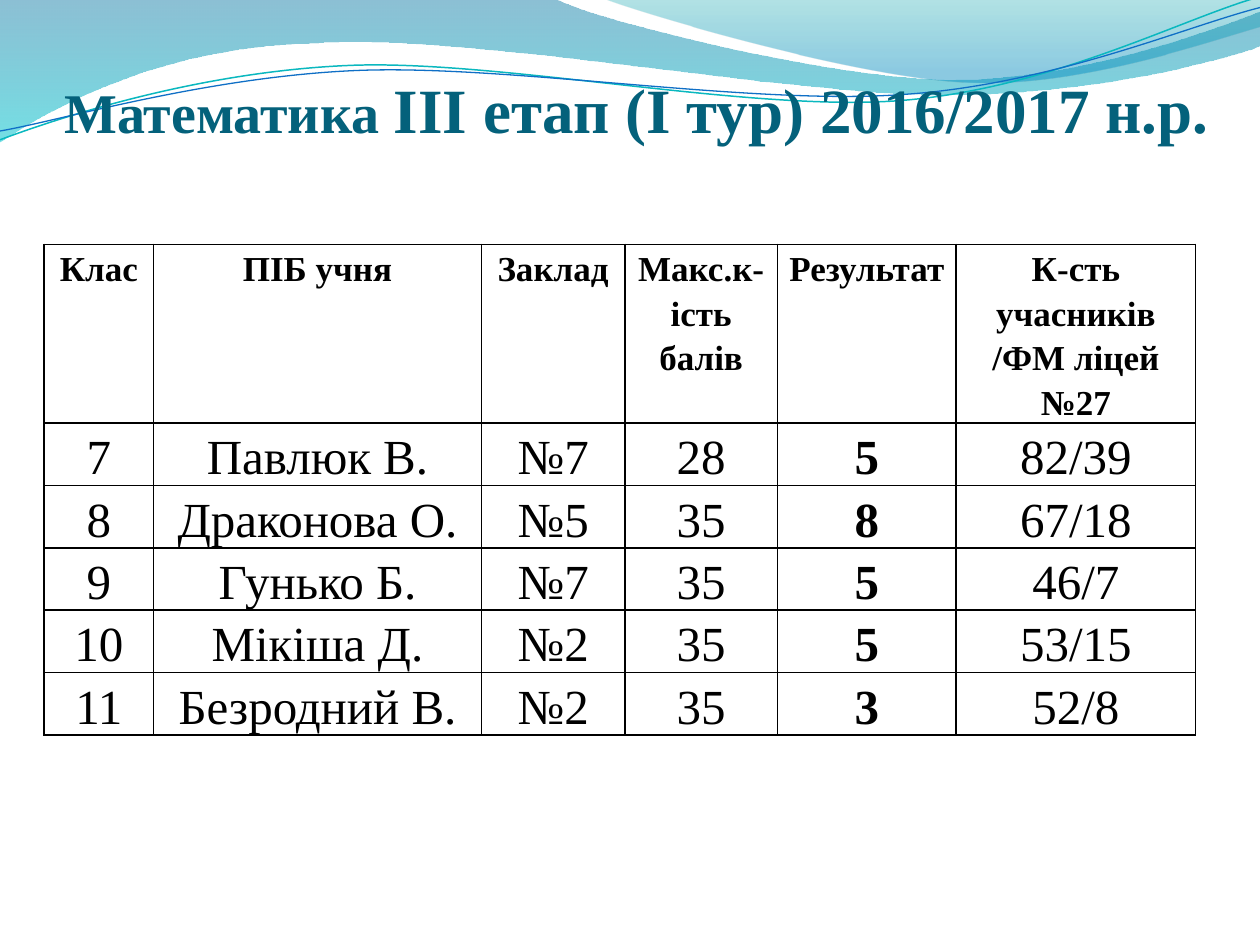
from lxml.etree import SubElement as Sub
from pptx import Presentation
from pptx.dml.color import RGBColor as Rgb
from pptx.enum.text import MSO_ANCHOR as Anchor, MSO_AUTO_SIZE as Auto, PP_ALIGN as Align
from pptx.oxml.ns import qn
from pptx.util import Inches, Pt

FONT = "Times New Roman"
COLS = [0.87, 2.6, 1.14, 1.21, 1.42, 1.9]
HEAD = ["Клас", "ПІБ учня", "Заклад", "Макс.к-ість балів", "Результат",
        "К-сть учасників\n/ФМ ліцей №27"]
ROWS = [
    ["7", "Павлюк В.", "№7", "28", "5", "82/39"],
    ["8", "Драконова О.", "№5", "35", "8", "67/18"],
    ["9", "Гунько Б.", "№7", "35", "5", "46/7"],
    ["10", "Мікіша Д.", "№2", "35", "5", "53/15"],
    ["11", "Безродний В.", "№2", "35", "3", "52/8"],
]
BAND = [
    [(0, 0)],
    [(4.4, -0.01)],
    [(4.76, 0.17), (6.64, 0.63), (7.58, 0.63)],
    [(8.53, 0.63), (9.58, 0.26), (10, 0.09)],
    [(10.01, 0.36)],
    [(9.83, 0.44), (8.7, 0.76), (7.46, 0.75)],
    [(6.22, 0.75), (3.82, 0.28), (2.57, 0.34)],
    [(1.29, 0.36), (0.46, 0.83), (-0.01, 1.13)],
    [(0, 0)],
]
CREST = [
    [(4.79, -0.01)],
    [(5.09, 0.11), (6.82, 0.62), (7.69, 0.65)],
    [(8.56, 0.69), (9.61, 0.32), (10, 0.21)],
    [(10, 0)],
    [(4.79, -0.01)],
]
TEAL = [
    [(0, 1.11)],
    [(0.48, 0.93), (1.58, 0.57), (2.77, 0.52)],
    [(3.95, 0.47), (5.93, 0.89), (7.13, 0.8)],
    [(8.33, 0.71), (9.38, 0.15), (9.98, -0.02)],
]
BLUE = [
    [(0, 1.04)],
    [(0.47, 0.96), (1.64, 0.61), (2.83, 0.56)],
    [(4.03, 0.51), (5.97, 0.84), (7.17, 0.75)],
    [(8.36, 0.67), (9.41, 0.21), (10, 0.06)],
]


def tint(hue):
    return Rgb.from_string(hue)


def write(par, text, size=28, bold=False, hue="000000", align=None, gap=None):
    par.alignment = align
    par.line_spacing = gap
    run = par.add_run()
    run.text = text
    font = run.font
    font.name, font.size, font.bold = FONT, Pt(size), bold
    font.color.rgb = tint(hue)


def curve(slide, segs, close):
    dots = [(Inches(x), Inches(y)) for seg in segs for x, y in seg]
    pen = slide.shapes.build_freeform(*dots[0], scale=1)
    pen.add_line_segments(dots[1:], close=close)
    shape = pen.convert_to_shape()
    shape.shadow.inherit = False
    legs = iter(list(shape.element.iter(qn("a:lnTo"))))
    for seg in segs[1:]:
        group = [next(legs) for dot in seg]
        if len(group) == 3:
            bend = group[0].makeelement(qn("a:cubicBezTo"), {})
            group[0].addprevious(bend)
            for leg in group:
                bend.append(leg[0])
                leg.getparent().remove(leg)
    return shape


def wave(slide, segs, stops):
    shape = curve(slide, segs, True)
    shape.line.fill.background()
    fill = shape.fill
    fill.gradient()
    fill.gradient_angle = 270
    for stop, (place, hue, alpha) in zip(fill.gradient_stops, stops):
        stop.position = place
        stop.color.rgb = tint(hue)
    clrs = shape.element.spPr.find(qn("a:gradFill")).iter(qn("a:srgbClr"))
    for clr, (place, hue, alpha) in zip(clrs, stops):
        Sub(clr, qn("a:alpha"), val=str(alpha * 1000))


def thread(slide, segs, hue, width):
    shape = curve(slide, segs, False)
    shape.fill.background()
    shape.line.color.rgb = tint(hue)
    shape.line.width = Pt(width)


def title(slide):
    shape = slide.shapes.title
    shape.left, shape.top, shape.width, shape.height = map(Inches, (0.51, 0.29, 9.12, 0.87))
    frame = shape.text_frame
    frame.auto_size = Auto.NONE
    frame.vertical_anchor = Anchor.BOTTOM
    frame.margin_left = frame.margin_right = frame.margin_bottom = 0
    frame.margin_top = Inches(0.05)
    par = frame.paragraphs[0]
    for text, size in [("Математика ", 32), ("ІІІ етап (І тур) 2016/2017 н.р.", 36)]:
        write(par, text, size=size, bold=True, hue="04617B", align=Align.LEFT)
    shape.element.getparent().append(shape.element)


def border(props):
    for n, side in enumerate(("lnL", "lnR", "lnT", "lnB")):
        line = props.makeelement(qn("a:" + side), {"w": str(Pt(1))})
        props.insert(n, line)
        Sub(Sub(line, qn("a:solidFill")), qn("a:srgbClr"), val="000000")


def box(cell, text, size, bold):
    cell.fill.background()
    cell.margin_left = cell.margin_right = Inches(0.07)
    cell.margin_top = cell.margin_bottom = 0
    frame = cell.text_frame
    for n, part in enumerate(text.split("\n")):
        par = frame.add_paragraph() if n else frame.paragraphs[0]
        write(par, part, size=size, bold=bold, align=Align.CENTER, gap=1.15)


def grid(slide):
    data = [HEAD] + ROWS
    frame = slide.shapes.add_table(len(data), len(COLS), Inches(0.35), Inches(1.94),
                                   Inches(sum(COLS)), Inches(3.9))
    table = frame.table
    table.first_row = table.horz_banding = False
    for col, width in zip(table.columns, COLS):
        col.width = Inches(width)
    for r, row in enumerate(data):
        table.rows[r].height = Inches(0.49 if r else 1.41)
        for c, text in enumerate(row):
            box(table.cell(r, c), text, 28 if r else 20, r == 0 or c == 4)
    for props in frame.element.iter(qn("a:tcPr")):
        border(props)


def main():
    deck = Presentation()
    deck.slide_width, deck.slide_height = Inches(10), Inches(7.5)
    slide = deck.slides.add_slide(deck.slide_layouts[5])
    wave(slide, BAND, [(0, "0074A1", 45), (1, "00C6CF", 55)])
    wave(slide, CREST, [(0, "00A1A9", 30), (0.8, "008BBF", 45)])
    thread(slide, TEAL, "0AB8BF", 0.85)
    thread(slide, BLUE, "0F6FC6", 0.75)
    title(slide)
    grid(slide)
    deck.save("out.pptx")


if __name__ == "__main__":
    main()
